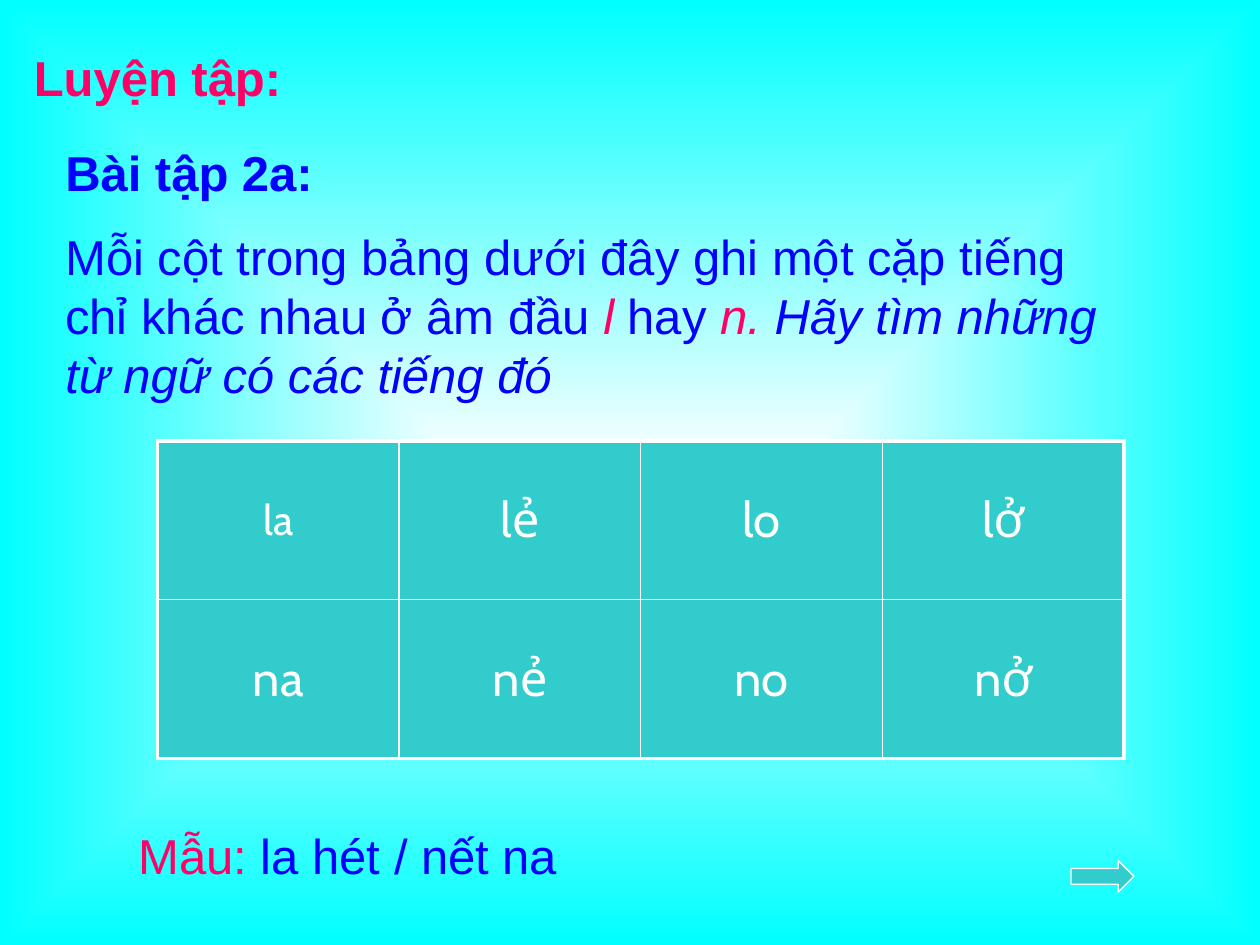
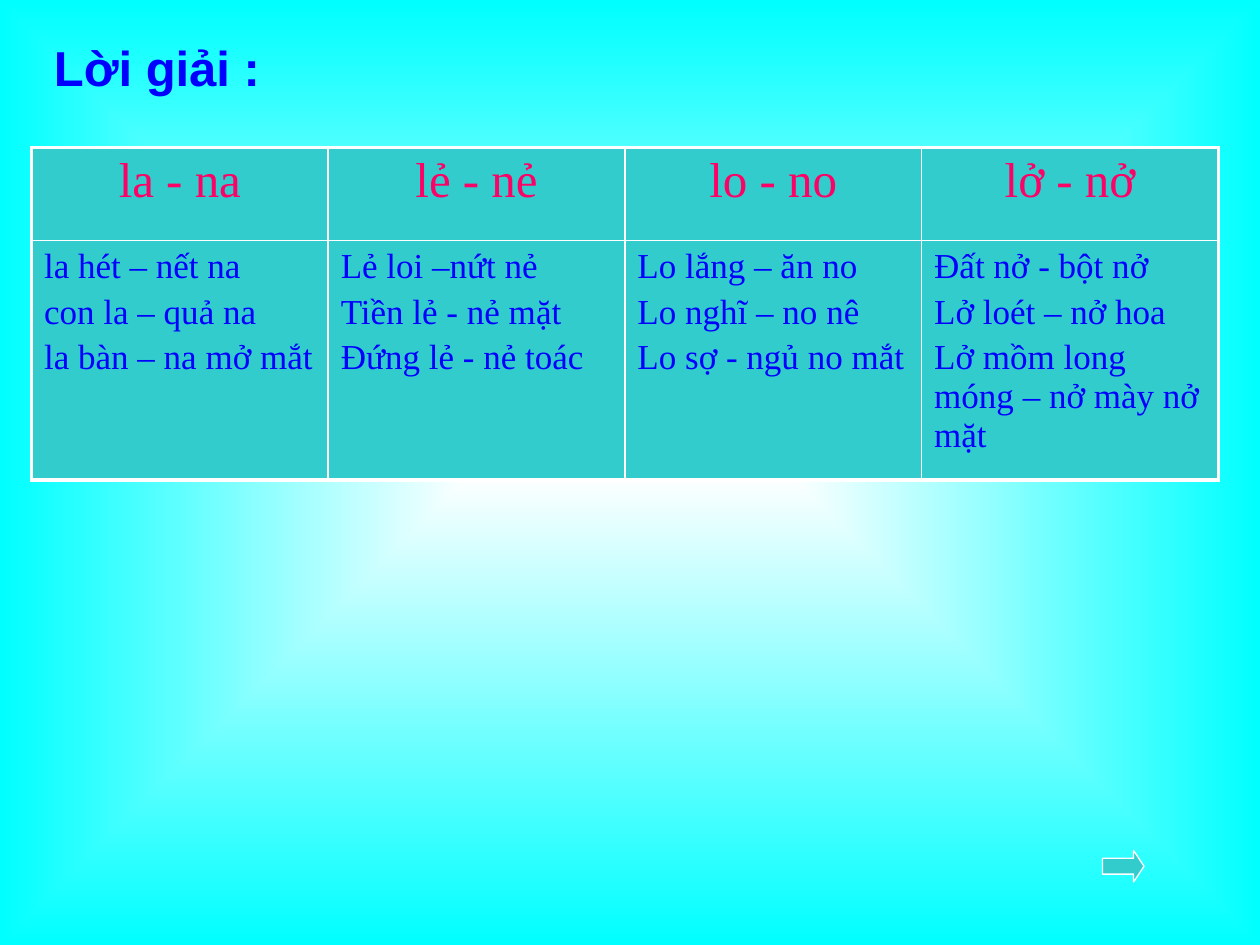
from pptx import Presentation
from pptx.dml.color import RGBColor
from pptx.enum.shapes import MSO_SHAPE
from pptx.enum.text import MSO_ANCHOR, PP_ALIGN
from pptx.oxml import parse_xml
from pptx.oxml.ns import nsdecls
from pptx.util import Inches, Pt

# Shared look
COLORS = {"pink": "FF0066", "blue": "0000FF", "teal": "33CCCC",
          "white": "FFFFFF", "aqua": "00FFFF"}
OUTER, INNER = 2.25, 1  # table border widths in points

# Content: a run is (text, colour, style), with b for bold and i for italic
EXERCISE_TEXTS = [
    ((0.17, 0.33, 2.92, 0.57), [[("Luyện tập:", "pink", "b")]]),
    ((0.42, 1.08, 8.5, 3.61), [
        [("Bài tập 2a:", "blue", "b")],
        [("Mỗi cột trong bảng dưới đây ghi một cặp tiếng "
          "chỉ khác nhau ở âm đầu ", "blue", ""),
         ("l", "pink", "i"), (" hay ", "blue", ""), ("n. ", "pink", "i"),
         ("Hãy tìm những từ ngữ có các tiếng đó", "blue", "i")],
    ]),
    ((1, 6.5, 3.58, 0.57), [[("Mẫu:", "pink", ""),
                             (" la hét / nết na", "blue", "")]]),
]
SYLLABLES = [["la", "lẻ", "lo", "lở"],
             ["na", "nẻ", "no", "nở"]]

ANSWER_TEXTS = [((0.33, 0.25, 2.08, 0.57), [[("Lời giải :", "blue", "b")]])]
ANSWERS = {
    "la - na": ["la hét – nết na", "con la – quả na", "la bàn – na mở mắt"],
    "lẻ - nẻ": ["Lẻ loi –nứt nẻ", "Tiền lẻ - nẻ mặt", "Đứng lẻ - nẻ toác"],
    "lo - no": ["Lo lắng – ăn no", "Lo nghĩ – no nê", "Lo sợ - ngủ no mắt"],
    "lở - nở": ["Đất nở - bột nở", "Lở loét – nở hoa",
                "Lở mồm long móng – nở mày nở mặt"],
}


def rgb(name):
    return RGBColor.from_string(COLORS[name])


def add_slide(prs):
    s = prs.slides.add_slide(prs.slide_layouts[6])
    s.element.cSld.insert(0, parse_xml(
        f'<p:bg {nsdecls("p", "a")}><p:bgPr><a:gradFill rotWithShape="0"><a:gsLst>'
        f'<a:gs pos="0"><a:srgbClr val="{COLORS["white"]}"/></a:gs>'
        f'<a:gs pos="100000"><a:srgbClr val="{COLORS["aqua"]}"/></a:gs></a:gsLst>'
        '<a:path path="shape"><a:fillToRect l="50000" t="50000" r="50000" b="50000"/>'
        '</a:path></a:gradFill><a:effectLst/></p:bgPr></p:bg>'))
    return s


def add_texts(s, boxes):
    for place, paragraphs in boxes:
        tf = s.shapes.add_textbox(*map(Inches, place)).text_frame
        tf.word_wrap = True
        for i, runs in enumerate(paragraphs):
            p = tf.add_paragraph() if i else tf.paragraphs[0]
            if i:
                p.space_before = Pt(14.5)
            for text, color, style in runs:
                r = p.add_run()
                r.text = text
                r.font.name, r.font.size = "Arial", Pt(28)
                r.font.color.rgb = rgb(color)
                r.font.bold, r.font.italic = "b" in style, "i" in style


def add_grid(s, place, row_heights, columns):
    """Add a table of equal columns with a heavy frame and thin inner lines."""
    rows = len(row_heights)
    table = s.shapes.add_table(rows, columns, *map(Inches, place)).table
    table.first_row = table.horz_banding = False
    for row, height in zip(table.rows, row_heights):
        row.height = Inches(height)
    for i in range(rows):
        for j in range(columns):
            cell = table.cell(i, j)
            cell.fill.solid()
            cell.fill.fore_color.rgb = rgb("teal")
            on_frame = {"L": j == 0, "R": j == columns - 1,
                        "T": i == 0, "B": i == rows - 1}
            tcPr = cell._tc.get_or_add_tcPr()
            for k, (side, outer) in enumerate(on_frame.items()):
                tcPr.insert(k, parse_xml(
                    f'<a:ln{side} {nsdecls("a")} w="{Pt(OUTER if outer else INNER)}">'
                    f'<a:solidFill><a:srgbClr val="{COLORS["white"]}"/></a:solidFill>'
                    f'</a:ln{side}>'))
    return table


def fill_cell(cell, lines, font, size, color, align=PP_ALIGN.CENTER):
    cell.text_frame.text = "\n".join(lines)
    for i, p in enumerate(cell.text_frame.paragraphs):
        p.alignment = align
        if i:
            p.space_before = Pt(size * 0.2)
        for r in p.runs:
            r.font.name, r.font.size = font, Pt(size)
            r.font.color.rgb = rgb(color)


def add_arrow(s, place, head):
    sp = s.shapes.add_shape(MSO_SHAPE.RIGHT_ARROW, *map(Inches, place))
    sp.adjustments[1] = head
    sp.shadow.inherit = False
    sp.fill.solid()
    sp.fill.fore_color.rgb = rgb("teal")
    sp.line.color.rgb = rgb("white")
    sp.line.width = Pt(0.75)


def main():
    prs = Presentation()
    prs.slide_width, prs.slide_height = Inches(10), Inches(7.5)

    # Exercise
    s = add_slide(prs)
    add_texts(s, EXERCISE_TEXTS)
    table = add_grid(s, (1.25, 3.5, 7.67, 2.52), [1.26, 1.26], 4)
    for i, row in enumerate(SYLLABLES):
        for j, syllable in enumerate(row):
            cell = table.cell(i, j)
            cell.vertical_anchor = MSO_ANCHOR.MIDDLE
            fill_cell(cell, [syllable], "Cabin", 24 if syllable == "la" else 28, "white")
    add_arrow(s, (8.5, 6.83, 0.5, 0.25), 0.5)

    # Answers
    s = add_slide(prs)
    table = add_grid(s, (0.25, 1.17, 9.42, 2.65), [0.74, 1.9], len(ANSWERS))
    for j, (pair, phrases) in enumerate(ANSWERS.items()):
        fill_cell(table.cell(0, j), [pair], "Times New Roman", 28, "pink")
        fill_cell(table.cell(1, j), phrases, "Times New Roman", 20, "blue", PP_ALIGN.LEFT)
    add_texts(s, ANSWER_TEXTS)
    add_arrow(s, (8.75, 6.75, 0.33, 0.25), 0.33)

    prs.save("out.pptx")


if __name__ == "__main__":
    main()
